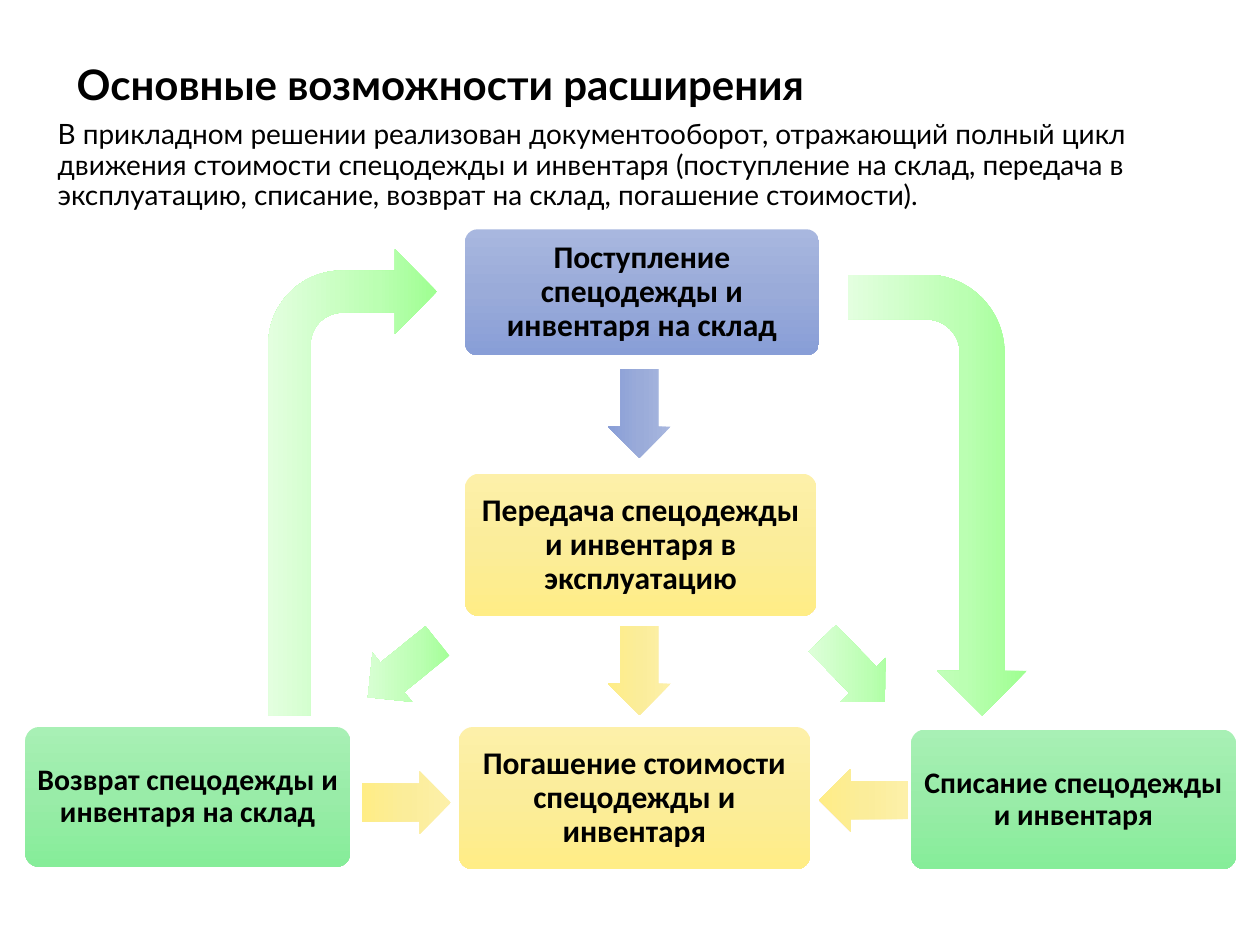
from pptx import Presentation
from pptx import util as u
from pptx.dml.color import RGBColor
from pptx.enum import shapes, text
from pptx.oxml import parse_xml
from pptx.oxml.ns import nsdecls

TITLE = "Основные возможности расширения"
INTRO = ("В прикладном решении реализован документооборот, отражающий полный цикл "
         "движения стоимости спецодежды и инвентаря (поступление на склад, передача в "
         "эксплуатацию, списание, возврат на склад, погашение стоимости).")

# Gradient stops: position in percent, colour
GRADIENTS = {
    "blue": [(0, "A8B7DF"), (50, "9AABD9"), (100, "889ED7")],
    "yellow": [(0, "FDF0A9"), (50, "FBED9A"), (100, "FFED86")],
    "green": [(0, "A8F0B5"), (50, "99ECA8"), (100, "86ED99")],
    "lime": [(0, "9EFF91"), (35, "BBFFB2"), (100, "E3FFDF")],
}

WIDE, SIDE = (2.79, 1.13), (2.58, 1.11)
# Words, left and top, size, gradient, font size
STEPS = [
    ("Поступление спецодежды и инвентаря на склад", (3.69, 1.82), (2.81, 1), "blue", 18),
    ("Передача спецодежды и инвентаря в эксплуатацию", (3.69, 3.76), WIDE, "yellow", 18),
    ("Возврат спецодежды и инвентаря на склад", (0.2, 5.77), SIDE, "green", 17),
    ("Погашение стоимости спецодежды и инвентаря", (3.64, 5.77), WIDE, "yellow", 18),
    ("Списание спецодежды и инвентаря", (7.23, 5.79), SIDE, "green", 17),
]

SHORT = (0.71, 0.5)
# Left and top before rotation, size, rotation, gradient
STRAIGHT_ARROWS = [
    ((4.72, 3.03), SHORT, 90, "blue"),
    ((4.72, 5.07), SHORT, 90, "yellow"),
    ((2.87, 6.12), SHORT, 0, "yellow"),
    ((6.5, 6.1), SHORT, 180, "yellow"),
    ((2.84, 5.06), SHORT, 141, "lime"),
    ((6.42, 5.07), SHORT, 45.8, "lime"),
]
BENT_ARROWS = [
    ((2.13, 1.98), (1.34, 3.7), 0, "lime"),
    ((5.69, 3.22), (3.5, 1.42), 90, "lime"),
]


def color(value):
    return RGBColor.from_string(value)


def inches(*values):
    return [u.Inches(value) for value in values]


def fill_gradient(shape, name, angle):
    """Fill with a linear gradient; the angle runs clockwise, in degrees."""
    stops = "".join(f'<a:gs pos="{place * 1000}"><a:srgbClr val="{value}"/></a:gs>'
                    for place, value in GRADIENTS[name])
    gradient = parse_xml(
        f'<a:gradFill {nsdecls("a")} rotWithShape="1"><a:gsLst>{stops}</a:gsLst>'
        f'<a:lin ang="{round(angle % 360 * 60000)}" scaled="0"/></a:gradFill>')
    shape.fill.background()
    properties = shape.element.spPr
    properties.replace(properties.find("{*}noFill"), gradient)


def add_figure(page, kind, place, size, gradient, angle):
    shape = page.shapes.add_shape(kind, *inches(*place, *size))
    shape.shadow.inherit = False
    fill_gradient(shape, gradient, angle)
    shape.line.fill.background()
    return shape


def write(shape, words, font, size, bold=False, align=text.PP_ALIGN.LEFT, **frame_format):
    frame = shape.text_frame
    for name, value in dict(word_wrap=True, **frame_format).items():
        setattr(frame, name, value)
    para = frame.paragraphs[0]
    para.alignment, para.line_spacing = align, 0.9
    span = para.add_run()
    span.text = words
    for name, value in dict(name=font, size=u.Pt(size), bold=bold).items():
        setattr(span.font, name, value)
    span.font.color.rgb = color("000000")


def add_step(page, words, place, size, gradient, font_size):
    box = add_figure(page, shapes.MSO_SHAPE.ROUNDED_RECTANGLE, place, size, gradient, 90)
    box.adjustments[0] = 0.1
    sides = ("left", "top", "right", "bottom")
    margins = {f"margin_{side}": u.Inches(0.05) for side in sides}
    write(box, words, "Calibri", font_size, True, text.PP_ALIGN.CENTER,
          vertical_anchor=text.MSO_ANCHOR.MIDDLE, **margins)


def add_arrow(page, kind, place, size, rotation, gradient):
    """Add an arrow whose gradient runs from right to left whatever its rotation."""
    arrow = add_figure(page, kind, place, size, gradient, 180 - rotation)
    arrow.rotation = rotation
    return arrow


def main():
    deck = Presentation()
    deck.slide_width, deck.slide_height = inches(10, 7.5)
    page = deck.slides.add_slide(deck.slide_layouts[6])

    title = page.shapes.add_textbox(*inches(0.51, 0.46, 9.02, 0.63))
    write(title, TITLE, "Lato", 24, True)
    intro = page.shapes.add_textbox(*inches(0.36, 0.91, 9.54, 0.91))
    write(intro, INTRO, "Lato", 16)

    for step in STEPS:
        add_step(page, *step)
    for item in STRAIGHT_ARROWS:
        arrow = add_arrow(page, shapes.MSO_SHAPE.RIGHT_ARROW, *item)
        arrow.adjustments[0] = 0.6
    for item in BENT_ARROWS:
        add_arrow(page, shapes.MSO_SHAPE.BENT_ARROW, *item)

    deck.save("out.pptx")


if __name__ == "__main__":
    main()
